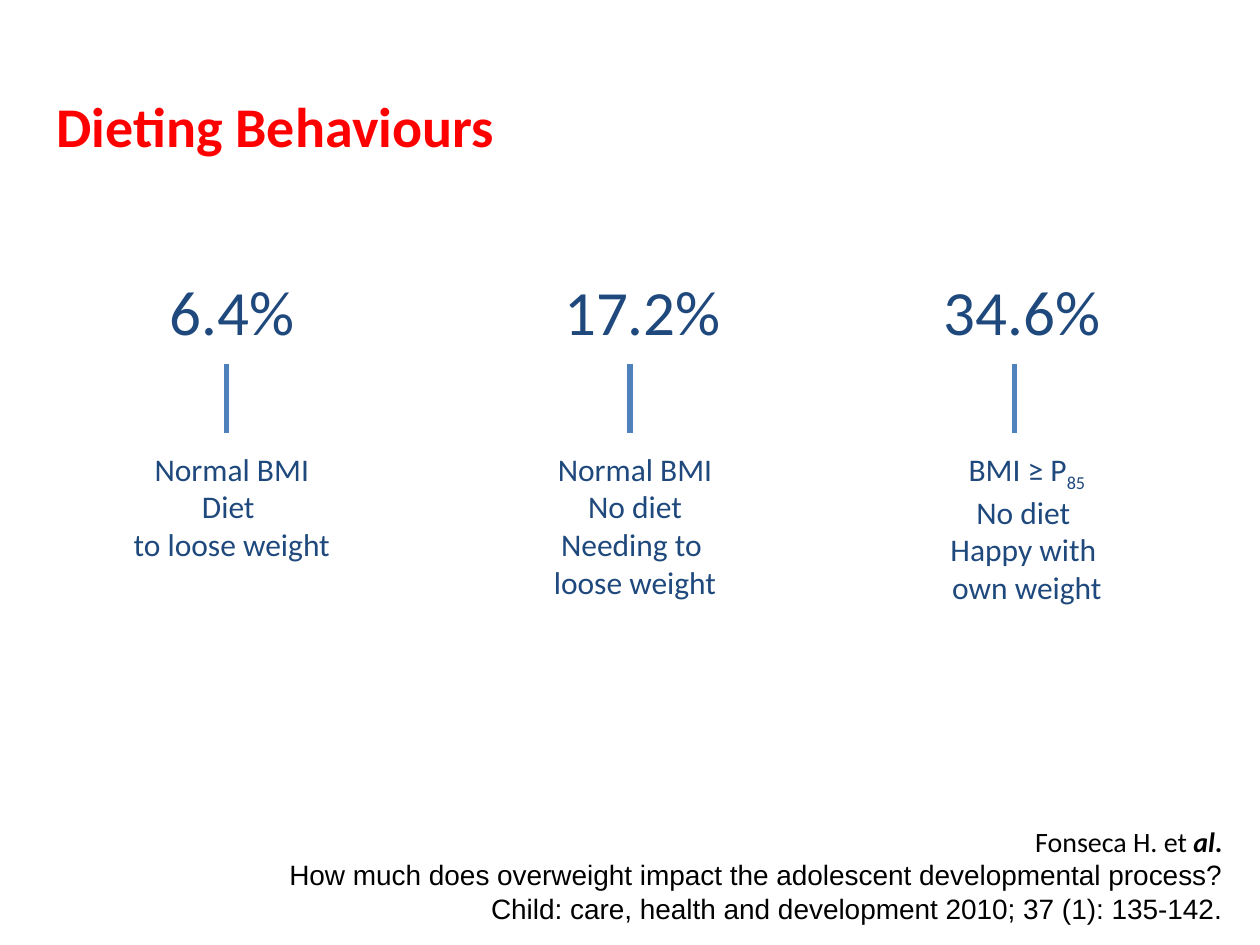
from pptx import Presentation
from pptx.dml.color import RGBColor
from pptx.enum.shapes import MSO_CONNECTOR
from pptx.enum.text import MSO_ANCHOR, PP_ALIGN
from pptx.oxml.ns import qn
from pptx.util import Inches, Pt
from lxml import etree

LEFT, CENTER, RIGHT = PP_ALIGN.LEFT, PP_ALIGN.CENTER, PP_ALIGN.RIGHT
TOP, BOTTOM = MSO_ANCHOR.TOP, MSO_ANCHOR.BOTTOM
STRAIGHT = MSO_CONNECTOR.STRAIGHT

COLORS = {"title": "FF0000", "text": "1F497D", "line": "4F81BD", "citation": "000000"}

# Shared rows, in inches
VALUE_TOP, VALUE_HEIGHT = 2.11, 0.71
LINE_TOP, LINE_BOTTOM = 2.89, 3.44
LABEL_TOP, LABEL_LINE, LABEL_PADDING = 3.52, 0.4, 0.1

prs = Presentation()
prs.slide_width, prs.slide_height = Inches(10), Inches(7.5)
slide = prs.slides.add_slide(prs.slide_layouts[5])


def style(paragraph, size, color, align=LEFT, font_name="Calibri"):
    paragraph.alignment = align
    paragraph.font.name = font_name
    paragraph.font.size = Pt(size)
    paragraph.font.color.rgb = RGBColor.from_string(COLORS[color])


def add_text(left, top, width, height, lines, size, color, align=LEFT, wrap=True):
    """Add a text box with one paragraph per line and return its text frame."""
    box = slide.shapes.add_textbox(*map(Inches, (left, top, width, height)))
    frame = box.text_frame
    frame.word_wrap = wrap
    frame.text = "\n".join(lines)
    for paragraph in frame.paragraphs:
        style(paragraph, size, color, align)
    return frame


title = slide.shapes.title
title.left, title.top, title.width, title.height = map(Inches, (0.35, 0.68, 9.18, 0.65))
title.text_frame.text = "Dieting Behaviours"
title.text_frame.vertical_anchor = TOP
heading = title.text_frame.paragraphs[0]
style(heading, 32, "title")
heading.font.bold = True

# value, value left, value width, line x, label left, label width, label lines
groups = [
    ("6.4%", 1.25, 1.2, 1.8, 0.55, 2.58,
     ["Normal BMI", "Diet ", "to loose weight"]),
    ("17.2%", 4.38, 1.46, 5, 4.08, 1.92,
     ["Normal BMI", "No diet", "Needing to ", "loose weight"]),
    ("34.6%", 7.39, 1.46, 8.05, 7.24, 1.82,
     ["BMI ≥ P", "No diet ", "Happy with ", "own weight"]),
]
for value, value_left, value_width, line_x, label_left, label_width, lines in groups:
    add_text(value_left, VALUE_TOP, value_width, VALUE_HEIGHT, [value], 36, "text", wrap=False)
    label_height = LABEL_PADDING + LABEL_LINE * len(lines)
    label = add_text(label_left, LABEL_TOP, label_width, label_height, lines, 18, "text", CENTER)

    link = slide.shapes.add_connector(
        STRAIGHT, Inches(line_x), Inches(LINE_TOP), Inches(line_x), Inches(LINE_BOTTOM))
    link.line.color.rgb = RGBColor.from_string(COLORS["line"])
    link.line.width = Pt(3)
    etree.SubElement(link._element.spPr, qn("a:effectLst"))

# The percentile subscript belongs to the last group's first line
percentile = label.paragraphs[0].add_run()
percentile.text = "85"
percentile.font._element.set("baseline", "-25000")

citation = add_text(1.3, 6.09, 8.5, 1.41, [
    "Fonseca H. et ",
    "How much does overweight impact the adolescent developmental process?",
    "Child: care, health and development 2010; 37 (1): 135-142.",
], 16, "citation", RIGHT)
citation.vertical_anchor = BOTTOM
citation.margin_bottom = Inches(0.16)
authors, *source_lines = citation.paragraphs
for text, italic in [("al", True), (".", False)]:
    run = authors.add_run()
    run.text = text
    run.font.bold = True
    run.font.italic = italic
for paragraph in source_lines:
    paragraph.font.name = "Arial"

prs.save("out.pptx")
